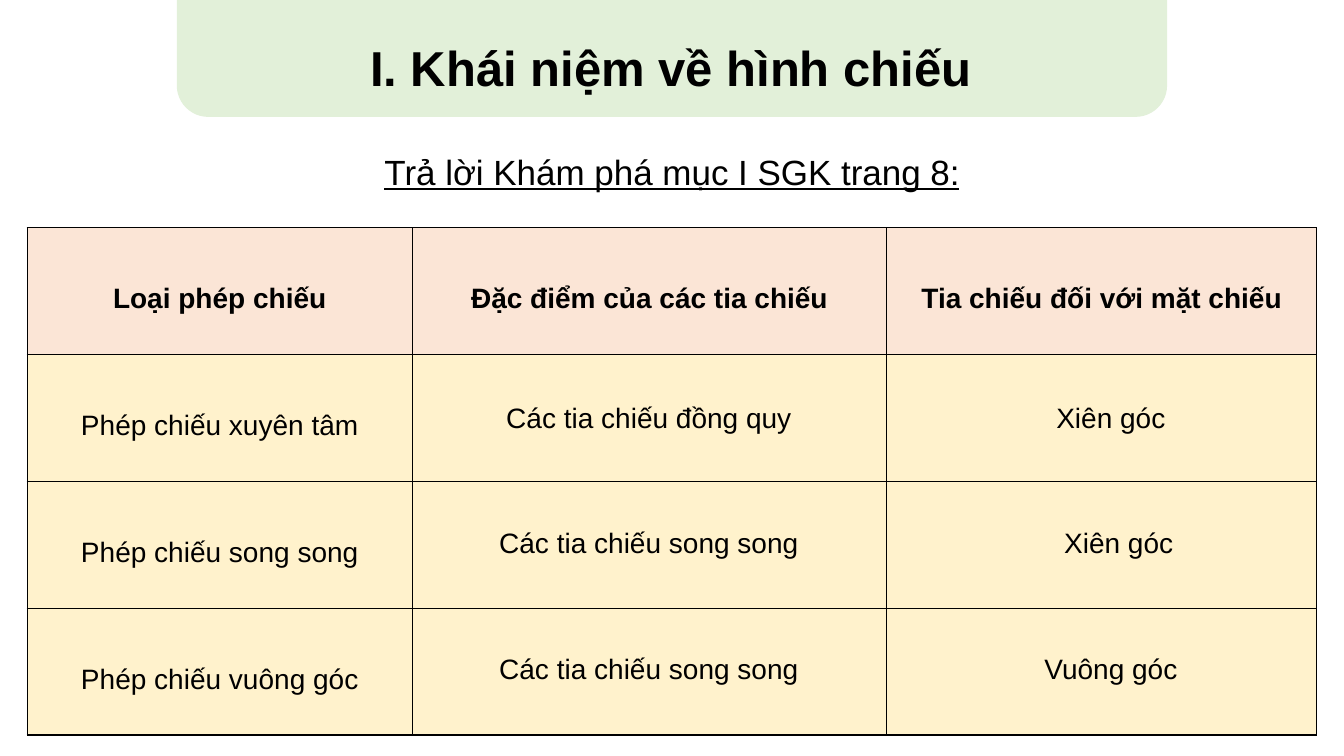
from pptx import Presentation
from pptx.dml.color import RGBColor as Rgb
from pptx.enum.shapes import MSO_SHAPE as Shape
from pptx.enum.text import MSO_ANCHOR as Anchor, PP_ALIGN as Align
from pptx.oxml import parse_xml
from pptx.oxml.ns import nsdecls
from pptx.util import Pt

HUES = {"ink": "000000", "band": "E2F0D9", "head": "FBE5D6", "row": "FFF2CC"}
KINDS = ["Loại phép chiếu", "Phép chiếu xuyên tâm",
         "Phép chiếu song song", "Phép chiếu vuông góc"]
HEADS = [KINDS[0], "Đặc điểm của các tia chiếu", "Tia chiếu đối với mặt chiếu"]
ROWS = [HEADS] + [[kind, "", ""] for kind in KINDS[1:]]
RAYS = ["Các tia chiếu đồng quy", "Các tia chiếu song song", "Các tia chiếu song song"]
ANGLES = [("Xiên góc", 664), ("Xiên góc", 669.6), ("Vuông góc", 664)]


class Deck:
    def __init__(self):
        self.prs = Presentation()
        self.prs.slide_width, self.prs.slide_height = Pt(960), Pt(540)
        self.slide = self.prs.slides.add_slide(self.prs.slide_layouts[5])
        self.shapes = self.slide.shapes
        self.face = "Arial"

    def hue(self, name):
        return Rgb.from_string(HUES[name])

    def label(self, frame, text, size, gap=1.0, **style):
        para = frame.paragraphs[0]
        para.alignment, para.line_spacing = Align.CENTER, gap
        run = para.add_run()
        run.text = text
        form = {"name": self.face, "size": Pt(size), "bold": False, **style}
        for key, value in form.items():
            setattr(run.font, key, value)
        run.font.color.rgb = self.hue("ink")

    def title(self, text, size, box):
        head = self.shapes.title
        for key, value in zip(("left", "top", "width", "height"), box):
            setattr(head, key, Pt(value))
        head.text_frame.vertical_anchor = Anchor.MIDDLE
        self.label(head.text_frame, text, size, bold=True)

    def band(self, box):
        """Put the rounded panel behind the title."""
        panel = self.shapes.add_shape(Shape.ROUNDED_RECTANGLE, *map(Pt, box))
        panel.shadow.inherit = False
        panel.fill.solid()
        panel.fill.fore_color.rgb = panel.line.color.rgb = self.hue("band")
        panel.line.width = Pt(1)
        self.shapes.title.element.addprevious(panel.element)

    def text(self, text, size, box, **style):
        frame = self.shapes.add_textbox(*map(Pt, box)).text_frame
        frame.word_wrap = True
        self.label(frame, text, size, **style)

    def edge(self, cell):
        """Draw a thin line on all four sides of a cell."""
        props = cell._tc.get_or_add_tcPr()
        for side in "LRTB":
            props.append(parse_xml(
                f'<a:ln{side} {nsdecls("a")} w="12700"><a:solidFill>'
                f'<a:srgbClr val="{HUES["ink"]}"/></a:solidFill></a:ln{side}>'))

    def table(self, rows, left, top, widths, high):
        box = left, top, sum(widths), high * len(rows)
        grid = self.shapes.add_table(len(rows), len(widths), *map(Pt, box)).table
        grid.first_row = grid.horz_banding = False
        for col, wide in zip(grid.columns, widths):
            col.width = Pt(wide)
        form = {"margin_left": Pt(5), "margin_right": Pt(5), "margin_top": 0,
                "margin_bottom": 0, "vertical_anchor": Anchor.MIDDLE}
        for r, row in enumerate(rows):
            for c, text in enumerate(row):
                cell = grid.cell(r, c)
                for key, value in form.items():
                    setattr(cell, key, value)
                self.edge(cell)
                cell.fill.solid()
                cell.fill.fore_color.rgb = self.hue("row" if r else "head")
                if text:
                    self.label(cell.text_frame, text, 20, 1.5, bold=r == 0)


def main():
    deck = Deck()
    deck.title("I. Khái niệm về hình chiếu", 35, (166, 23, 627, 50))
    deck.band((126.8, -49, 706.4, 132))
    deck.table(ROWS, 19.5, 162.6, (275, 339, 307), 90.6)
    deck.text("Trả lời Khám phá mục I SGK trang 8:", 25,
              (240, 103.7, 480, 37.5), underline=True)
    for i, (ray, (angle, left)) in enumerate(zip(RAYS, ANGLES)):
        top = 282.2 + 89.7 * i
        deck.text(ray, 20, (334, top, 259, 31.5))
        deck.text(angle, 20, (left, top, 259, 31.5))
    deck.prs.save("out.pptx")


if __name__ == "__main__":
    main()
